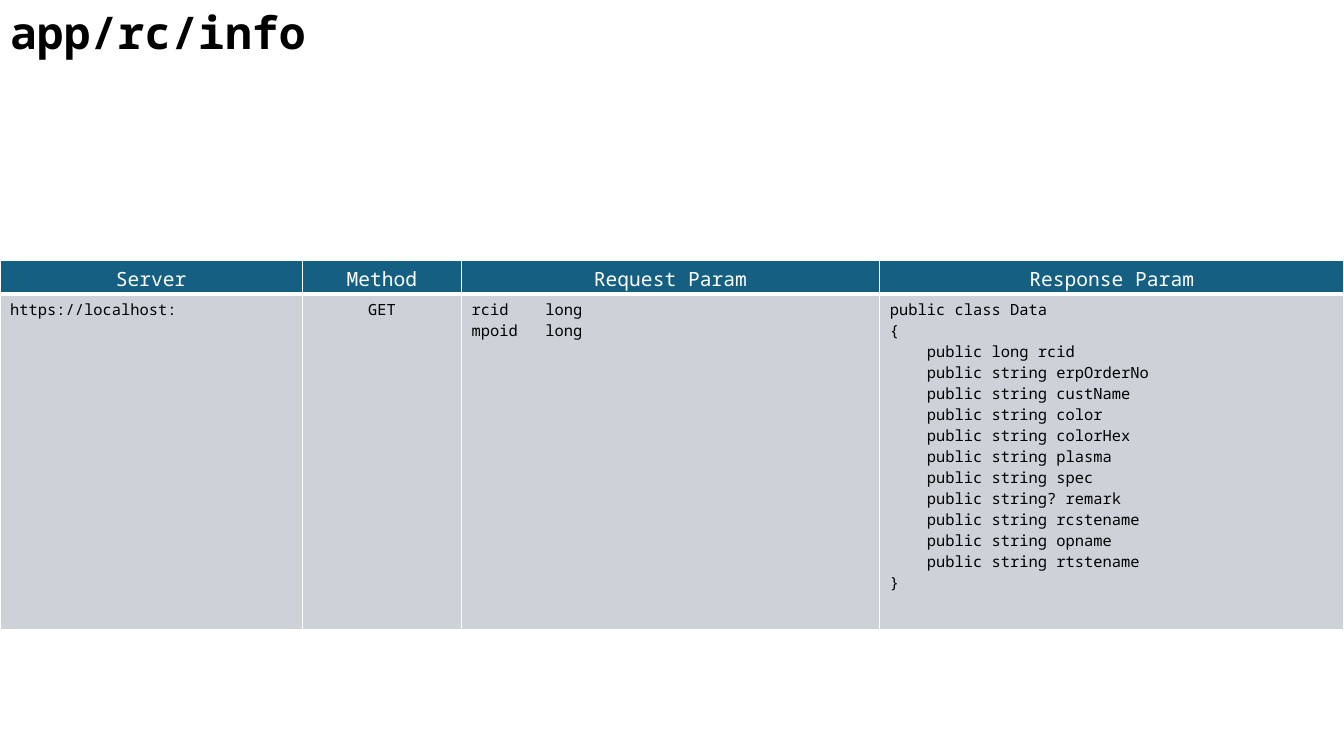
from lxml.etree import SubElement
from pptx import Presentation
from pptx.dml.color import RGBColor
from pptx.enum.text import MSO_ANCHOR, MSO_AUTO_SIZE, PP_ALIGN
from pptx.oxml.ns import qn
from pptx.util import Cm, Pt

BLACK = RGBColor(0x00, 0x00, 0x00)
WHITE = RGBColor(0xFF, 0xFF, 0xFF)
HEADER_BLUE = RGBColor(0x15, 0x60, 0x82)
BODY_GREY = RGBColor(0xCC, 0xD2, 0xD8)

COLUMN_WIDTHS = (7.62, 4.01, 10.54, 11.7)
HEADERS = ("Server", "Method", "Request Param", "Response Param")
RESPONSE_CLASS = """public class Data
{
    public long rcid
    public string erpOrderNo
    public string custName
    public string color
    public string colorHex
    public string plasma
    public string spec
    public string? remark
    public string rcstename
    public string opname
    public string rtstename
}"""
DETAILS = ("https://localhost:", "GET", "rcid\tlong\nmpoid\tlong", RESPONSE_CLASS)
DETAIL_ALIGNMENTS = (PP_ALIGN.LEFT, PP_ALIGN.CENTER, PP_ALIGN.LEFT, PP_ALIGN.LEFT)


class SlideBuilder:
    font_name = "Noto Sans Mono"
    type_tab = Cm(1.86)

    def __init__(self, presentation):
        self.slide = presentation.slides.add_slide(presentation.slide_layouts[5])

    def add_lines(self, frame, text, size, color, alignment=PP_ALIGN.LEFT, bold=False):
        """Fill a text frame, one paragraph per line of text."""
        for index, line in enumerate(text.split("\n")):
            paragraph = frame.add_paragraph() if index else frame.paragraphs[0]
            paragraph.alignment = alignment
            if "\t" in line:
                tabs = SubElement(paragraph._p.get_or_add_pPr(), qn("a:tabLst"))
                SubElement(tabs, qn("a:tab"), pos=str(self.type_tab), algn="l")
            run = paragraph.add_run()
            run.text = line
            run.font.name = self.font_name
            run.font.size = Pt(size)
            run.font.bold = bold
            run.font.color.rgb = color

    def title(self, text, left, top, width, height):
        shape = self.slide.shapes.title
        shape.left, shape.top = Cm(left), Cm(top)
        shape.width, shape.height = Cm(width), Cm(height)
        frame = shape.text_frame
        frame.word_wrap = True
        frame.auto_size = MSO_AUTO_SIZE.SHAPE_TO_FIT_TEXT
        frame.vertical_anchor = MSO_ANCHOR.TOP
        self.add_lines(frame, text, 32, BLACK, bold=True)

    def table(self, left, top, column_widths, row_heights):
        table = self.slide.shapes.add_table(
            len(row_heights), len(column_widths), Cm(left), Cm(top),
            Cm(sum(column_widths)), Cm(sum(row_heights))).table
        table.horz_banding = False
        for column, width in zip(table.columns, column_widths):
            column.width = Cm(width)
        for row, height in zip(table.rows, row_heights):
            row.height = Cm(height)
        return table

    def cell(self, cell, text, size, color, fill, alignment, bottom_width=1):
        properties = cell._tc.get_or_add_tcPr()
        for side, width in zip("LRTB", (1, 1, 1, bottom_width)):
            line = SubElement(properties, qn(f"a:ln{side}"), w=str(Pt(width)))
            solid = SubElement(line, qn("a:solidFill"))
            SubElement(solid, qn("a:srgbClr"), val=str(WHITE))
        cell.fill.solid()
        cell.fill.fore_color.rgb = fill
        self.add_lines(cell.text_frame, text, size, color, alignment)


def main():
    presentation = Presentation()
    presentation.slide_width = Cm(33.87)
    presentation.slide_height = Cm(19.05)

    builder = SlideBuilder(presentation)
    builder.title("app/rc/info", 0, 0, 24, 1.63)
    table = builder.table(0, 6.56, COLUMN_WIDTHS, (0.61, 8.46))
    for column, header in enumerate(HEADERS):
        builder.cell(table.cell(0, column), header, 14, WHITE, HEADER_BLUE,
                     PP_ALIGN.CENTER, bottom_width=3)
    for column, (detail, alignment) in enumerate(zip(DETAILS, DETAIL_ALIGNMENTS)):
        builder.cell(table.cell(1, column), detail, 11, BLACK, BODY_GREY, alignment)

    presentation.save("out.pptx")


if __name__ == "__main__":
    main()
